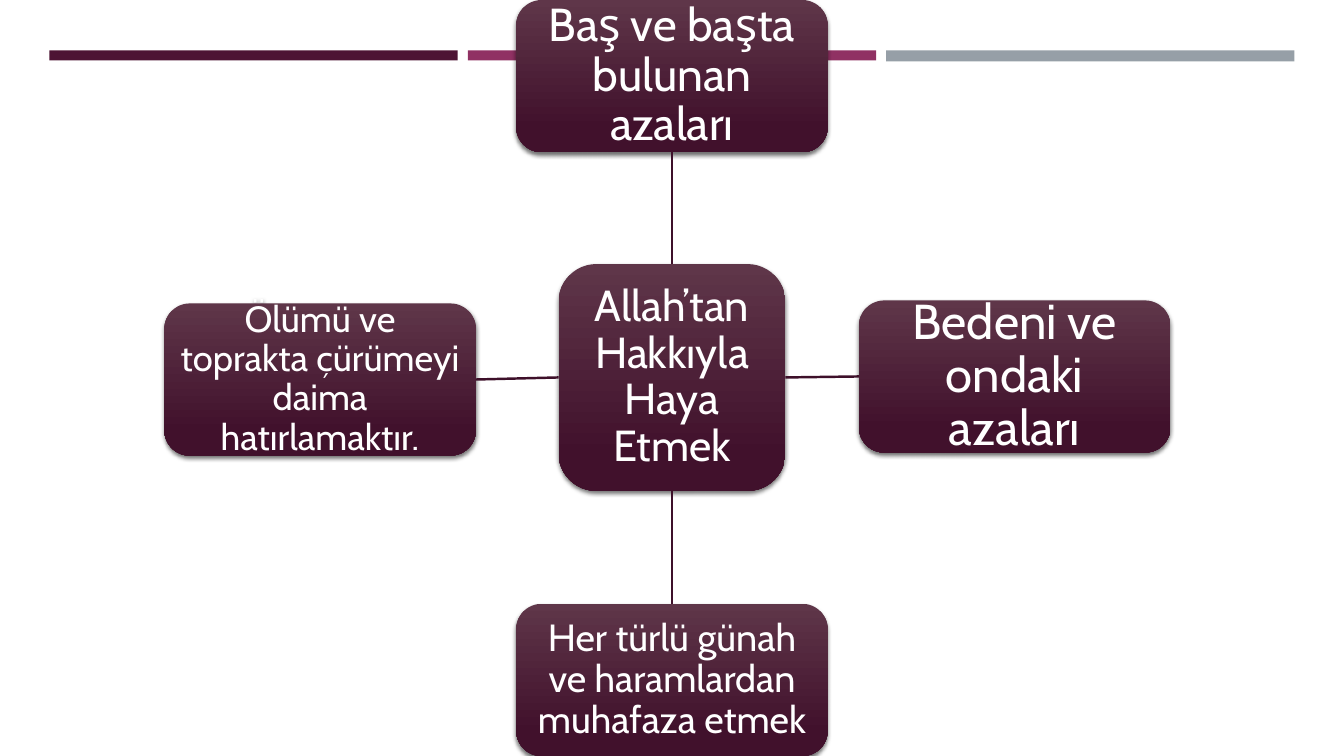
import lxml.etree
import pptx
import pptx.dml.color
import pptx.enum.shapes
import pptx.enum.text
import pptx.oxml.ns
import pptx.util

SLIDE_WIDTH = pptx.util.Inches(13.33)
SLIDE_HEIGHT = pptx.util.Inches(7.5)
SHAPES = pptx.enum.shapes.MSO_SHAPE

# Shares of the slide's width and height, in percent
CENTRE_X, CENTRE_Y = 50, 49.93
CORE_SIZE = (16.88, 30)
BRANCH_SIZE = (23.18, 20.13)
BAR_LEFT, BAR_TOP, BAR_WIDTH, BAR_STEP = 3.68, 6.67, 30.38, 31.13

BARS = [("4D1434", 1.33), ("903163", 1.33), ("969FA7", 1.47)]
GRADIENT = [(0, "5F3649"), (0.84, "41112C")]
LINE_COLOUR = "3E102A"
TEXT_COLOUR = "FFFFFF"

CORE_TEXT = "Allah’tan Hakkıyla Haya Etmek"
# text, centre x, centre y, font size, inset, side of the core, side of the branch
BRANCHES = [
    ("Baş ve başta bulunan azaları", CENTRE_X, BRANCH_SIZE[1] / 2, 33, 0.09, 0, 2),
    ("Bedeni ve ondaki azaları", 75.5, 49.8, 35, 0.1, 3, 1),
    ("Her türlü günah ve haramlardan muhafaza etmek",
     CENTRE_X, 100 - BRANCH_SIZE[1] / 2, 27, 0.07, 2, 0),
    ("Ölümü ve toprakta çürümeyi daima hatırlamaktır.", 23.82, 50.2, 26, 0.07, 1, 3),
]


def colour(value):
    return pptx.dml.color.RGBColor.from_string(value)


def set_format(target, values):
    for name, value in values.items():
        setattr(target, name, value)


def across(share):
    return round(SLIDE_WIDTH * share / 100)


def down(share):
    return round(SLIDE_HEIGHT * share / 100)


def add_effects(properties):
    return lxml.etree.SubElement(properties, pptx.oxml.ns.qn("a:effectLst"))


def add_plain_shape(slide, kind, left, top, width, height):
    """Add a shape without outline or theme shadow, placed by percent shares."""
    shape = slide.shapes.add_shape(
        kind, across(left), down(top), across(width), down(height))
    shape.line.fill.background()
    return shape


def add_bar(slide, index, fill, height):
    bar = add_plain_shape(slide, SHAPES.RECTANGLE, BAR_LEFT + index * BAR_STEP,
                          BAR_TOP, BAR_WIDTH, height)
    bar.shadow.inherit = False
    bar.fill.solid()
    bar.fill.fore_color.rgb = colour(fill)


def add_soft_shadow(shape):
    effects = add_effects(shape._element.spPr)
    shadow = lxml.etree.SubElement(
        effects, pptx.oxml.ns.qn("a:outerShdw"), blurRad=str(pptx.util.Pt(3)),
        dist=str(pptx.util.Pt(2)), dir="5400000", algn="ctr", rotWithShape="0")
    black = lxml.etree.SubElement(shadow, pptx.oxml.ns.qn("a:srgbClr"), val="000000")
    lxml.etree.SubElement(black, pptx.oxml.ns.qn("a:alpha"), val="55000")


def add_node(slide, text, centre_x, centre_y, size, font_size, inset):
    """Add a rounded gradient box around a centre point."""
    width, height = size
    node = add_plain_shape(slide, SHAPES.ROUNDED_RECTANGLE, centre_x - width / 2,
                           centre_y - height / 2, width, height)
    node.fill.gradient()
    node.fill.gradient_angle = 270
    for stop, (position, value) in zip(node.fill.gradient_stops, GRADIENT):
        stop.position = position
        stop.color.rgb = colour(value)
    add_soft_shadow(node)

    frame = node.text_frame
    set_format(frame, {
        "word_wrap": True,
        "vertical_anchor": pptx.enum.text.MSO_ANCHOR.MIDDLE,
        **{f"margin_{side}": pptx.util.Inches(inset)
           for side in ("left", "top", "right", "bottom")},
    })
    paragraph = frame.paragraphs[0]
    set_format(paragraph, {"alignment": pptx.enum.text.PP_ALIGN.CENTER,
                           "line_spacing": 0.9})
    run = paragraph.add_run()
    run.text = text
    set_format(run.font, {"name": "Cabin", "size": pptx.util.Pt(font_size)})
    run.font.color.rgb = colour(TEXT_COLOUR)
    return node


def join(slide, core, core_side, branch, branch_side):
    connector = slide.shapes.add_connector(
        pptx.enum.shapes.MSO_CONNECTOR.STRAIGHT, 0, 0, 0, 0)
    connector.begin_connect(core, core_side)
    connector.end_connect(branch, branch_side)
    connector.line.width = pptx.util.Pt(1.75)
    connector.line.color.rgb = colour(LINE_COLOUR)
    add_effects(connector._element.spPr)


def main():
    presentation = pptx.Presentation()
    set_format(presentation, {"slide_width": SLIDE_WIDTH, "slide_height": SLIDE_HEIGHT})
    slide = presentation.slides.add_slide(presentation.slide_layouts[6])

    for index, (fill, height) in enumerate(BARS):
        add_bar(slide, index, fill, height)

    core = add_node(slide, CORE_TEXT, CENTRE_X, CENTRE_Y, CORE_SIZE, 31, 0.09)
    for text, centre_x, centre_y, font_size, inset, core_side, branch_side in BRANCHES:
        branch = add_node(slide, text, centre_x, centre_y, BRANCH_SIZE, font_size, inset)
        join(slide, core, core_side, branch, branch_side)

    presentation.save("out.pptx")


if __name__ == "__main__":
    main()
